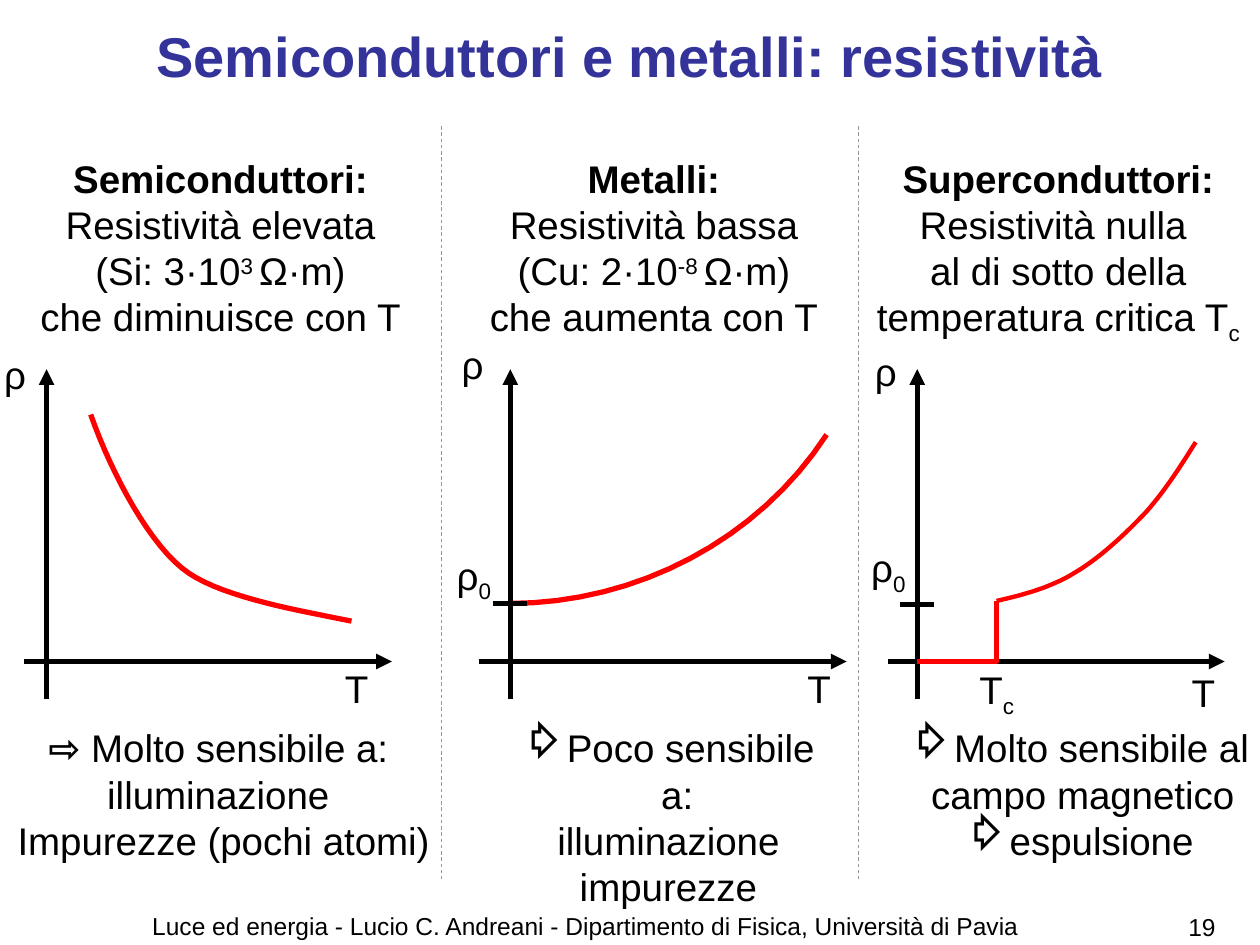
from lxml.etree import SubElement
from pptx import Presentation
from pptx.dml.color import RGBColor
from pptx.enum.dml import MSO_LINE
from pptx.enum.shapes import MSO_CONNECTOR
from pptx.enum.text import MSO_ANCHOR, PP_ALIGN
from pptx.oxml.ns import qn
from pptx.util import Inches, Pt

COLORS = {"title": "333399", "text": "000000", "axis": "000000",
          "curve": "FF0000", "divider": "969696"}
RAISED, LOWERED = 30000, -25000
ARROW = "⇨"

PANELS = [
    {"left": 0, "heading_left": 0.08, "axis": 0.37, "span": (0.19, 3.11),
     "heading": [[("Semiconduttori:", "bold")], ["Resistività elevata"],
                 ["(Si: 3·10", ("3 ", RAISED), "Ω·m)"], ["che diminuisce con T"]],
     "labels": [(["ρ"], 0.12, 1.74), (["T"], 2.83, 4.23)],
     "curves": [([(0.72, 2.29), (0.89, 2.77), (1.2, 3.35), (1.5, 3.55),
                  (1.8, 3.75), (2.4, 3.85), (2.79, 3.93)], 3)],
     "note": [[(ARROW, "bold"), " Molto sensibile a: "], ["illuminazione "],
              ["Impurezze (pochi atomi)"]],
     "note_box": (0.04, 3.47), "bullets": [], "wrap": False},
    {"left": 3.5, "heading_left": 0.02, "axis": 0.55, "span": (0.3, 3.22),
     "heading": [[("Metalli:", "bold")], ["Resistività bassa"],
                 ["(Cu: 2·10", ("-8 ", RAISED), "Ω·m)"], ["che aumenta con T"]],
     "labels": [(["ρ"], 0.25, 1.66), (["ρ", ("0", LOWERED)], 0.26, 3.33),
                (["T"], 3, 4.23)],
     "curves": [([(0.54, 3.79), (1.56, 3.79), (2.52, 3.28), (3.06, 2.45)], 3)],
     "tick": 3.79,
     "note": [["Poco sensibile a:"], ["illuminazione"], ["impurezze"]],
     "note_box": (0.42, 2.77), "bullets": [0], "wrap": False},
    {"left": 6.81, "heading_left": -0.08, "axis": 0.47, "span": (0.24, 2.91),
     "heading": [[("Superconduttori:", "bold")], ["Resistività nulla "],
                 ["al di sotto della temperatura critica T", ("c", LOWERED)]],
     "labels": [(["ρ"], 0.22, 1.71), (["ρ", ("0", LOWERED)], 0.24, 3.27),
                (["T"], 2.74, 4.26), (["T", ("c", LOWERED)], 1.1, 4.24)],
     "curves": [([(1.1, 3.77), (1.32, 3.72), (1.54, 3.66), (1.73, 3.54),
                  (1.93, 3.42), (2.13, 3.23), (2.29, 3.06), (2.44, 2.89),
                  (2.56, 2.7), (2.68, 2.51)], 2.5)],
     "step": [(0.47, 4.25), (1.1, 4.25), (1.1, 3.77)],
     "tick": 3.8,
     "note": [["Molto sensibile al campo magnetico "], ["espulsione"]],
     "note_box": (0.28, 2.95), "bullets": [0, 1], "wrap": True},
]


def rgb(part):
    """Return the colour of a named part."""
    return RGBColor.from_string(COLORS[part])


def add_bullet(paragraph):
    """Give a paragraph the hollow arrow bullet."""
    properties = paragraph._p.get_or_add_pPr()
    properties.set("marL", str(Inches(0.14)))
    properties.set("indent", str(-Inches(0.14)))
    SubElement(properties, qn("a:buChar")).set("char", ARROW)


def add_text(slide, box, lines, size=22, color="text", align=PP_ALIGN.CENTER,
             wrap=True, bullets=(), anchor=MSO_ANCHOR.TOP):
    """Write lines of plain or styled pieces in a box."""
    frame = slide.shapes.add_textbox(*map(Inches, box)).text_frame
    frame.word_wrap = wrap
    frame.vertical_anchor = anchor
    for index, pieces in enumerate(lines):
        paragraph = frame.add_paragraph() if index else frame.paragraphs[0]
        paragraph.alignment = align
        if index in bullets:
            add_bullet(paragraph)
        for piece in pieces:
            words, style = (piece, None) if isinstance(piece, str) else piece
            run = paragraph.add_run()
            run.text = words
            run.font.name = "Arial"
            run.font.size = Pt(size)
            run.font.color.rgb = rgb(color)
            run.font.bold = style == "bold"
            if isinstance(style, int):
                run.font._element.set("baseline", str(style))


def add_line(slide, start, end, color="axis", width=3, arrow=False):
    """Draw a straight line, with an arrowhead at its end if asked."""
    connector = slide.shapes.add_connector(
        MSO_CONNECTOR.STRAIGHT, *map(Inches, (*start, *end)))
    connector.line.color.rgb = rgb(color)
    connector.line.width = Pt(width)
    if arrow:
        SubElement(connector.line._get_or_add_ln(), qn("a:tailEnd")).set("type", "triangle")
    SubElement(connector._element.spPr, qn("a:effectLst"))
    return connector


def bezier(controls, steps=16):
    """Sample a chain of cubic segments into points."""
    points = [controls[0]]
    for first in range(0, len(controls) - 1, 3):
        segment = controls[first:first + 4]
        for step in range(1, steps + 1):
            t = step / steps
            weights = ((1 - t) ** 3, 3 * t * (1 - t) ** 2, 3 * t * t * (1 - t), t ** 3)
            points.append(tuple(sum(w * p[axis] for w, p in zip(weights, segment))
                                for axis in (0, 1)))
    return points


def add_curve(slide, left, top, points, width):
    """Draw an open red curve through points relative to a corner."""
    start, *rest = [(Inches(left + x), Inches(top + y)) for x, y in points]
    builder = slide.shapes.build_freeform(*start)
    builder.add_line_segments(rest, close=False)
    curve = builder.convert_to_shape()
    curve.shadow.inherit = False
    curve.fill.background()
    curve.line.color.rgb = rgb("curve")
    curve.line.width = Pt(width)


def add_graph(slide, left, top, panel):
    """Draw the axes, curves, tick and labels of one panel."""
    axis = left + panel["axis"]
    x_start, x_end = panel["span"]
    add_line(slide, (axis, top + 4.55), (axis, top + 1.93), arrow=True)
    add_line(slide, (left + x_start, top + 4.25), (left + x_end, top + 4.25), arrow=True)
    if "step" in panel:
        add_curve(slide, left, top, panel["step"], 3)
    for controls, width in panel["curves"]:
        add_curve(slide, left, top, bezier(controls), width)
    if "tick" in panel:
        height = top + panel["tick"]
        add_line(slide, (axis - 0.14, height), (axis + 0.13, height))
    for label, center, offset in panel["labels"]:
        add_text(slide, (left + center - 0.31, top + offset, 0.62, 0.46), [label])


def add_panel(slide, left, top, panel):
    """Place the heading, graph and note of one material."""
    if left:
        divider = add_line(slide, (left, top), (left, top + 5.98), "divider", 0.5)
        divider.line.dash_style = MSO_LINE.DASH
    add_text(slide, (left + panel["heading_left"], top + 0.18, 3.34, 1.56), panel["heading"])
    add_graph(slide, left, top, panel)
    note_left, note_width = panel["note_box"]
    add_text(slide, (left + note_left, top + 4.7, note_width, 1.19), panel["note"],
             wrap=panel["wrap"], bullets=panel["bullets"])


def add_footer(slide, left, top):
    """Write the lecture line and the page number."""
    add_text(slide, (left, top, 8.9, 0.36),
             [["Luce ed energia - Lucio C. Andreani - "
               "Dipartimento di Fisica, Università di Pavia"]], size=14)
    add_text(slide, (left + 9.12, top + 0.01, 0.48, 0.52), [["19 "]],
             size=14, align=PP_ALIGN.RIGHT)


def main():
    """Build and save the slide."""
    deck = Presentation()
    deck.slide_width, deck.slide_height = Inches(10), Inches(7.5)
    slide = deck.slides.add_slide(deck.slide_layouts[6])
    add_text(slide, (0.5, -0.03, 9, 0.93),
             [[("Semiconduttori e metalli: resistività", "bold")]],
             size=32, color="title", anchor=MSO_ANCHOR.MIDDLE)
    for panel in PANELS:
        add_panel(slide, panel["left"], 1, panel)
    add_footer(slide, 0.2, 7.18)
    deck.save("out.pptx")


if __name__ == "__main__":
    main()
